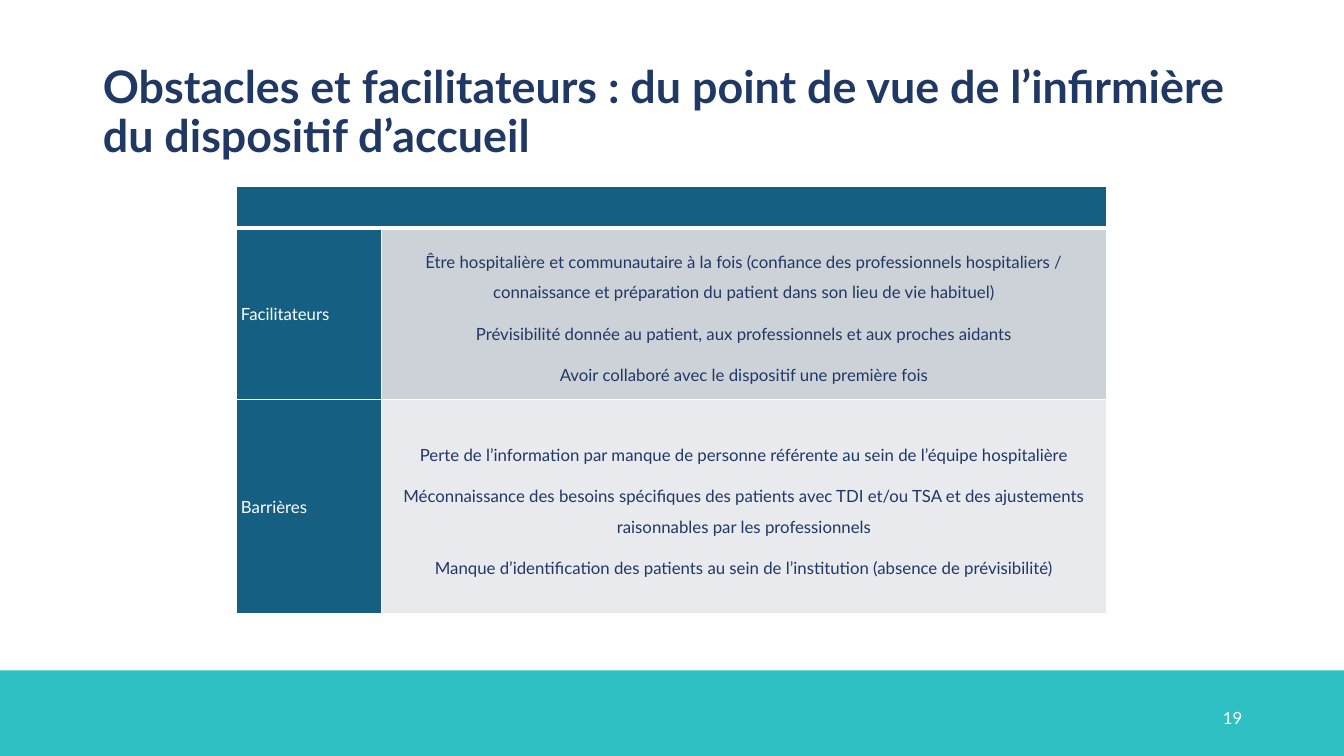
from lxml import etree
from pptx import Presentation
from pptx.dml.color import RGBColor
from pptx.enum.shapes import MSO_SHAPE
from pptx.enum.text import MSO_ANCHOR, MSO_AUTO_SIZE, PP_ALIGN
from pptx.oxml.ns import qn
from pptx.util import Inches, Pt

MIDDLE = MSO_ANCHOR.MIDDLE
LEFT, CENTER, RIGHT, JUSTIFY = (
    PP_ALIGN.LEFT, PP_ALIGN.CENTER, PP_ALIGN.RIGHT, PP_ALIGN.JUSTIFY)
NAVY, BLUE, TEAL, WHITE = "203864", "156082", "2FC0C4", "FFFFFF"
ROW_SHADES = ["CCD2D8", "E8EAED"]


def color(hex_value):
    return RGBColor.from_string(hex_value)


def format_text(frame, size, hex_value, align, spacing=1.0, after=0, bold=False):
    frame.word_wrap = True
    for paragraph in frame.paragraphs:
        paragraph.alignment = align
        paragraph.line_spacing = spacing
        paragraph.space_after = Pt(after)
        for run in paragraph.runs:
            run.font.name = "Lato"
            run.font.size = Pt(size)
            run.font.bold = bold
            run.font.color.rgb = color(hex_value)


prs = Presentation()
prs.slide_width, prs.slide_height = Inches(13.33), Inches(7.5)
slide = prs.slides.add_slide(prs.slide_layouts[5])

# Footer band
band = slide.shapes.add_shape(
    MSO_SHAPE.ROUNDED_RECTANGLE, 0, Inches(6.65), prs.slide_width, Inches(0.86))
band.adjustments[0] = 0
band.shadow.inherit = False
band.fill.solid()
band.fill.fore_color.rgb = color(TEAL)
band.line.fill.background()

# Title
title = slide.shapes.title
title.left, title.top = Inches(0.92), Inches(0.4)
title.width, title.height = Inches(11.5), Inches(1.45)
title.text_frame.text = (
    "Obstacles et facilitateurs : du point de vue de l’infirmière du dispositif d’accueil")
title.text_frame.vertical_anchor = MIDDLE
title.text_frame.auto_size = MSO_AUTO_SIZE.NONE
format_text(title.text_frame, 32, NAVY, LEFT, spacing=0.9, bold=True)

# Page number
page_number = slide.shapes.add_textbox(
    Inches(11.12), Inches(6.89), Inches(1.3), Inches(0.46))
page_number.text_frame.text = "19"
page_number.text_frame.vertical_anchor = MIDDLE
format_text(page_number.text_frame, 12, WHITE, RIGHT)

# Factors table: an empty merged header, then one row per group
factors = [
    ("Facilitateurs", [
        "Être hospitalière et communautaire à la fois (confiance des professionnels "
        "hospitaliers / connaissance et préparation du patient dans son lieu de vie habituel)",
        "Prévisibilité donnée au patient, aux professionnels et aux proches aidants",
        "Avoir collaboré avec le dispositif une première fois",
    ]),
    ("Barrières", [
        "Perte de l’information par manque de personne référente au sein de "
        "l’équipe hospitalière",
        "Méconnaissance des besoins spécifiques des patients avec TDI et/ou TSA "
        "et des ajustements raisonnables par les professionnels",
        "Manque d’identification des patients au sein de l’institution "
        "(absence de prévisibilité)",
    ]),
]
column_widths, row_heights = [1.44, 7.2], [0.41, 1.7, 2.13]
table = slide.shapes.add_table(
    len(row_heights), len(column_widths), Inches(2.34), Inches(1.85),
    Inches(sum(column_widths)), Inches(sum(row_heights))).table
for column, width in zip(table.columns, column_widths):
    column.width = Inches(width)
for row, height in zip(table.rows, row_heights):
    row.height = Inches(height)
table.cell(0, 0).merge(table.cell(0, 1))

for r, (group, points) in enumerate(factors, start=1):
    group_cell, points_cell = table.cell(r, 0), table.cell(r, 1)
    group_cell.text_frame.text = group
    format_text(group_cell.text_frame, 12, WHITE, JUSTIFY, spacing=1.07, after=8)
    points_cell.text_frame.text = "\n".join(points)
    format_text(points_cell.text_frame, 12, NAVY, CENTER, spacing=1.5, after=8)

# Cell fills, margins and white borders
for r in range(len(row_heights)):
    for c in range(len(column_widths)):
        cell = table.cell(r, c)
        cell.vertical_anchor = MIDDLE
        cell.margin_left = cell.margin_right = Inches(0.05)
        cell.margin_top = cell.margin_bottom = 0
        cell.fill.solid()
        cell.fill.fore_color.rgb = color(ROW_SHADES[r - 1] if r and c else BLUE)
        properties = cell._tc.get_or_add_tcPr()
        for position, side in enumerate(["lnL", "lnR", "lnT", "lnB"]):
            weight = 3 if r == 0 and side == "lnB" else 1
            border = etree.Element(qn(f"a:{side}"), w=str(Pt(weight)))
            fill = etree.SubElement(border, qn("a:solidFill"))
            etree.SubElement(fill, qn("a:srgbClr"), val=WHITE)
            properties.insert(position, border)

prs.save("out.pptx")
